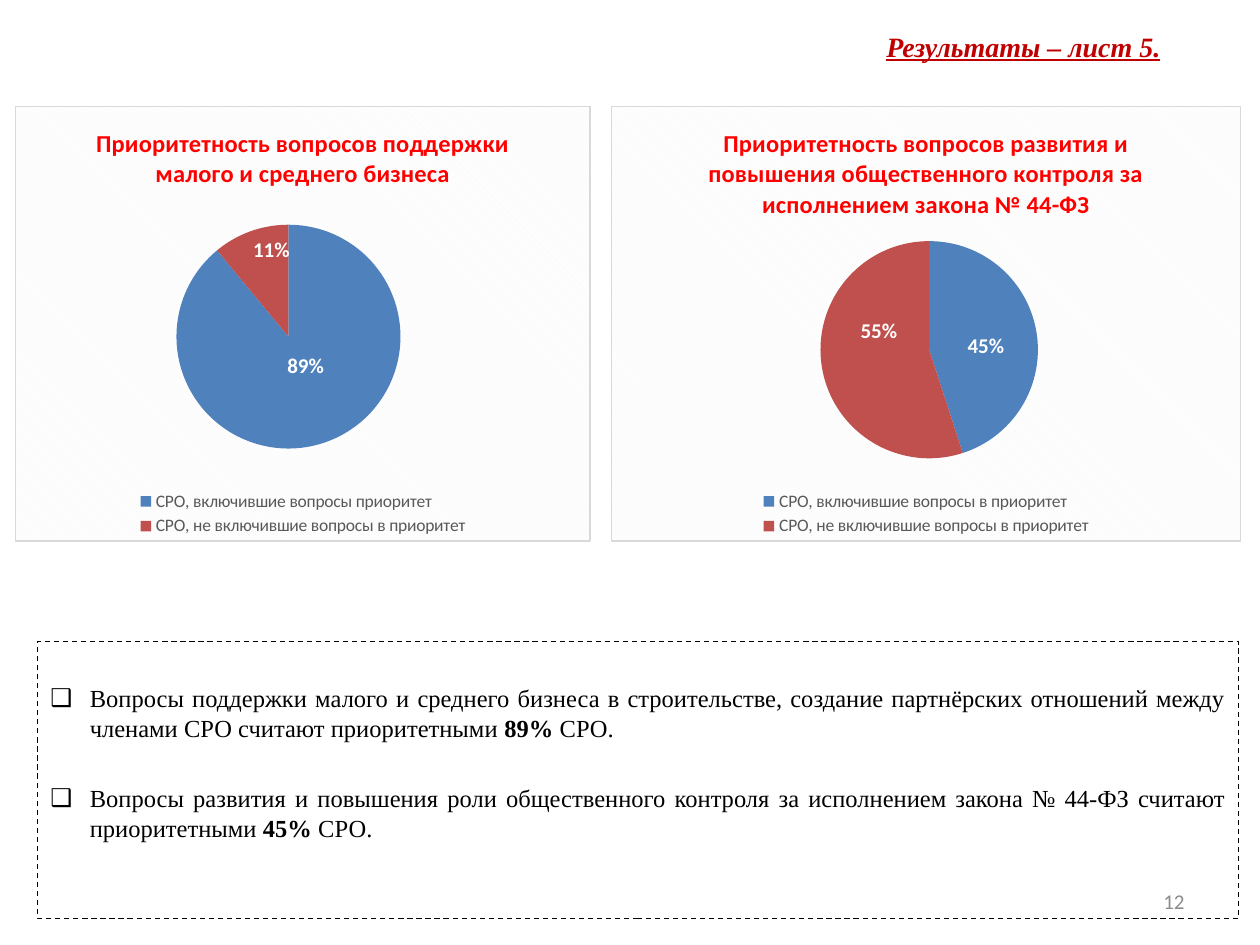
"""Build the results slide: two priority pie charts above a list of conclusions."""
from copy import deepcopy
from dataclasses import dataclass

from lxml import etree
from pptx import Presentation
from pptx.chart.data import CategoryChartData
from pptx.dml.color import RGBColor
from pptx.enum.chart import XL_CHART_TYPE as ChartType
from pptx.enum.chart import XL_LABEL_POSITION as LabelPosition
from pptx.enum.chart import XL_LEGEND_POSITION as LegendPosition
from pptx.enum.dml import MSO_LINE_DASH_STYLE as Dash
from pptx.enum.text import MSO_ANCHOR as Anchor
from pptx.enum.text import MSO_AUTO_SIZE as AutoSize
from pptx.enum.text import PP_ALIGN as Align
from pptx.oxml import parse_xml
from pptx.oxml.ns import nsdecls, qn
from pptx.util import Pt


@dataclass(frozen=True)
class Theme:
    serif: str = "Times New Roman"
    sans: str = "Calibri"
    black: RGBColor = RGBColor(0, 0, 0)
    white: RGBColor = RGBColor(255, 255, 255)
    heading: RGBColor = RGBColor(0xC0, 0, 0)
    chart_title: RGBColor = RGBColor(255, 0, 0)
    legend: RGBColor = RGBColor(0x59, 0x59, 0x59)
    number: RGBColor = RGBColor(0x8C, 0x8C, 0x8C)
    slices: tuple = (RGBColor(0x4F, 0x81, 0xBD), RGBColor(0xC0, 0x50, 0x4D))
    pattern: str = "F2F2F2"
    border: str = "D9D9D9"
    heading_size: int = 16
    body_size: int = 14
    label_size: int = 12
    legend_size: int = 10


theme = Theme()


def style(font, name, size, color, bold=False):
    font.name, font.size, font.bold = name, Pt(size), bold
    font.color.rgb = color


def manual_layout(settings):
    values = "".join(f'<c:{key} val="{value}"/>' for key, value in settings.items())
    return parse_xml(
        f'<c:layout {nsdecls("c")}><c:manualLayout>{values}</c:manualLayout></c:layout>'
    )


deck = Presentation()
deck.slide_width, deck.slide_height = Pt(720), Pt(540)
page = deck.slides.add_slide(deck.slide_layouts[1])

title = page.shapes.title
title.left, title.top, title.width, title.height = Pt(58.3), Pt(15), Pt(612), Pt(22.5)
title.text_frame.auto_size = AutoSize.NONE
title.text_frame.vertical_anchor = Anchor.MIDDLE
para = title.text_frame.paragraphs[0]
para.text = "Результаты – лист 5."
para.alignment = Align.RIGHT
style(para.font, theme.serif, theme.heading_size, theme.heading, True)
para.font.italic = para.font.underline = True

conclusions = [
    ("Вопросы поддержки малого и среднего бизнеса в строительстве, создание партнёрских "
     "отношений между членами СРО считают приоритетными ", "89%", " СРО."),
    ("Вопросы развития и повышения роли общественного контроля за исполнением закона "
     "№ 44-ФЗ считают приоритетными ", "45%", " СРО."),
]
body = page.placeholders[1]
body.left, body.top, body.width, body.height = Pt(21.6), Pt(366.5), Pt(686.2), Pt(158.4)
body.line.color.rgb = theme.black
body.line.width = Pt(0.75)
body.line.dash_style = Dash.DASH
frame = body.text_frame
frame.auto_size = AutoSize.NONE
frame.vertical_anchor = Anchor.TOP
frame.margin_top = Pt(24)
for index, pieces in enumerate(conclusions):
    para = frame.paragraphs[0] if index == 0 else frame.add_paragraph()
    para.alignment = Align.JUSTIFY
    para.space_before = Pt(23.5 if index else 0)
    style(para.font, theme.serif, theme.body_size, theme.black)
    for piece in pieces:
        span = para.add_run()
        span.text = piece
        style(span.font, theme.serif, theme.body_size, theme.black, piece.endswith("%"))
    settings = para._p.get_or_add_pPr()
    settings.set("marL", str(Pt(22.5)))
    settings.set("indent", str(-Pt(22.5)))
    bullet = etree.Element(qn("a:buChar"), char="❑")
    settings.insert_element_before(bullet, "a:tabLst", "a:defRPr", "a:extLst")

charts = [
    dict(title="Приоритетность вопросов поддержки малого и среднего бизнеса",
         left=8.6, width=329, first="СРО, включившие вопросы приоритет",
         values=(89, 11), plot=(0.28, 0.27, 0.39, 0.52), shifts={0: (0, -0.13)}),
    dict(title="Приоритетность вопросов развития и повышения общественного контроля "
               "за исполнением закона № 44-ФЗ",
         left=349.2, width=360, first="СРО, включившие вопросы в приоритет",
         values=(45, 55), plot=(0.33, 0.31, 0.35, 0.5),
         shifts={0: (-0.04, 0), 1: (0.05, -0.05)}),
]
for item in charts:
    data = CategoryChartData()
    data.categories = [item["first"], "СРО, не включившие вопросы в приоритет"]
    data.add_series("Series 1", item["values"])
    chart = page.shapes.add_chart(
        ChartType.PIE, Pt(item["left"]), Pt(60.5), Pt(item["width"]), Pt(249), data
    ).chart
    style(chart.font, theme.sans, theme.legend_size, theme.black)

    chart.has_title = True
    para = chart.chart_title.text_frame.paragraphs[0]
    para.text = item["title"]
    style(para.font, theme.sans, theme.body_size, theme.chart_title, True)
    chart.chart_title.include_in_layout = False

    chart.has_legend = True
    chart.legend.position = LegendPosition.BOTTOM
    chart.legend.include_in_layout = False
    style(chart.legend.font, theme.sans, theme.legend_size, theme.legend)

    chart.plots[0].vary_by_categories = True
    series = chart.plots[0].series[0]
    for index, color in enumerate(theme.slices):
        fill = series.points[index].format.fill
        fill.solid()
        fill.fore_color.rgb = color

    labels = series.data_labels
    style(labels.font, theme.sans, theme.label_size, theme.white, True)
    labels.number_format, labels.number_format_is_linked = "0%", False
    labels.position = LabelPosition.INSIDE_END
    labels.show_value, labels.show_percentage = False, True
    shared = [part for part in labels._element if part.tag != qn("c:showLeaderLines")]
    for place, (index, (across, down)) in enumerate(item["shifts"].items()):
        label = parse_xml(f'<c:dLbl {nsdecls("c")}><c:idx val="{index}"/></c:dLbl>')
        label.append(manual_layout({"x": across, "y": down}))
        label.extend(deepcopy(part) for part in shared)
        labels._element.insert(place, label)

    space = chart._chartSpace
    area = space.chart.plotArea
    for layout in area.findall(qn("c:layout")):
        area.remove(layout)
    settings = {"layoutTarget": "inner", "xMode": "edge", "yMode": "edge"}
    area.insert(0, manual_layout(settings | dict(zip("xywh", item["plot"]))))
    space.chart.addnext(parse_xml(
        f'<c:spPr {nsdecls("c", "a")}><a:pattFill prst="dkDnDiag">'
        f'<a:fgClr><a:srgbClr val="{theme.pattern}"/></a:fgClr>'
        f'<a:bgClr><a:srgbClr val="{theme.white}"/></a:bgClr></a:pattFill>'
        f'<a:ln w="{Pt(0.75)}"><a:solidFill><a:srgbClr val="{theme.border}"/></a:solidFill>'
        "</a:ln></c:spPr>"
    ))

number = page.shapes.add_textbox(Pt(516), Pt(500.5), Pt(168), Pt(28.8))
number.text_frame.word_wrap = True
number.text_frame.vertical_anchor = Anchor.MIDDLE
para = number.text_frame.paragraphs[0]
para.text = "12"
para.alignment = Align.RIGHT
style(para.font, theme.sans, theme.label_size, theme.number)

deck.save("out.pptx")
